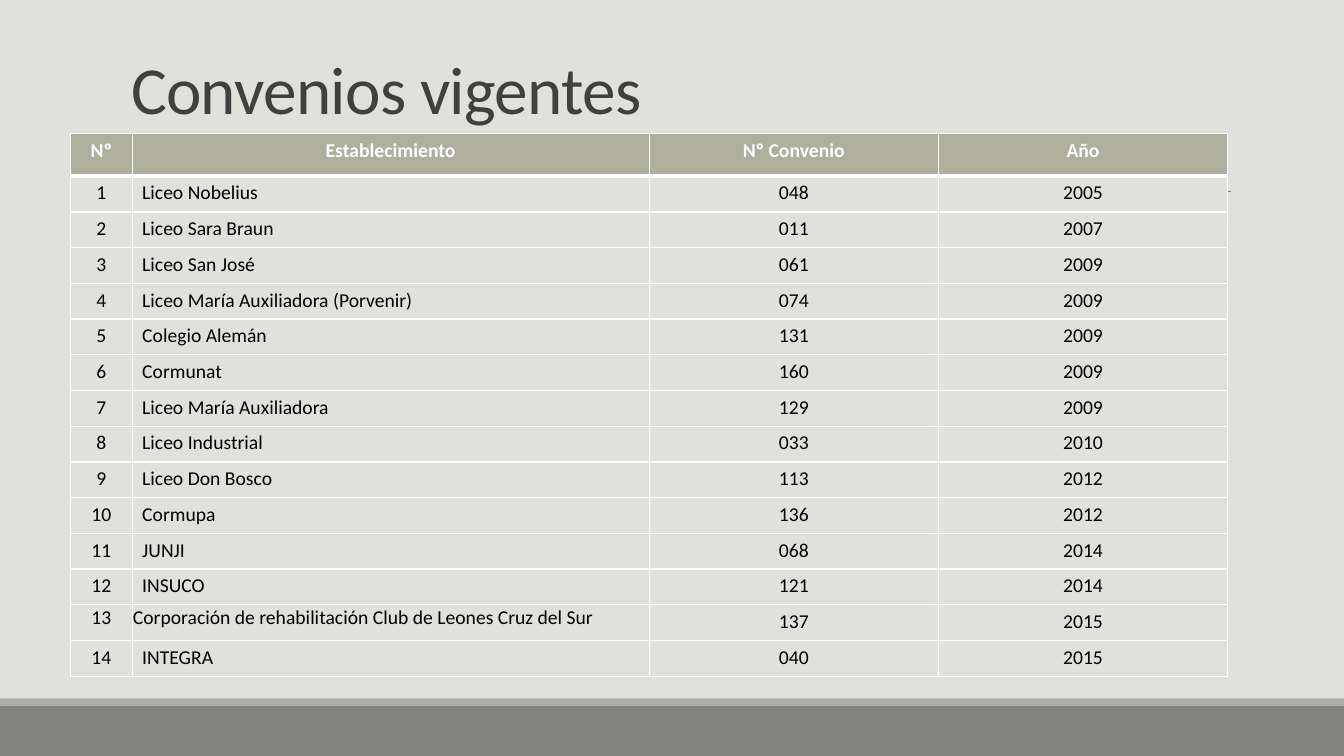
from dataclasses import dataclass

from lxml.etree import SubElement as Sub
from pptx import Presentation
from pptx.dml.color import RGBColor as Rgb
from pptx.enum.shapes import MSO_CONNECTOR as Link, MSO_SHAPE as Shape
from pptx.enum.text import MSO_ANCHOR as Anchor, MSO_AUTO_SIZE as Fit, PP_ALIGN as Align
from pptx.oxml.ns import qn
from pptx.util import Cm, Pt


@dataclass(frozen=True)
class Theme:
    font: str = "Calibri"
    back: str = "E1E1DB"
    foot: str = "82847C"
    strip: str = "ACADA8"
    rule: str = "808080"
    title: str = "404040"
    head: str = "AFAF9E"
    white: str = "FFFFFF"
    ink: str = "000000"
    big: int = 48
    small: int = 14


LOOK = Theme()
WIDE, HIGH = 33.87, 19.05

HEADS = ("Nº", "Establecimiento", "Nº Convenio", "Año")
DEALS = (
    ("Liceo Nobelius", "048", "2005"),
    ("Liceo Sara Braun", "011", "2007"),
    ("Liceo San José", "061", "2009"),
    ("Liceo María Auxiliadora (Porvenir)", "074", "2009"),
    ("Colegio Alemán", "131", "2009"),
    ("Cormunat", "160", "2009"),
    ("Liceo María Auxiliadora", "129", "2009"),
    ("Liceo Industrial", "033", "2010"),
    ("Liceo Don Bosco", "113", "2012"),
    ("Cormupa", "136", "2012"),
    ("JUNJI", "068", "2014"),
    ("INSUCO", "121", "2014"),
    ("Corporación de rehabilitación Club de Leones Cruz del Sur", "137", "2015"),
    ("INTEGRA", "040", "2015"),
)
TIGHT = 13  # row whose first two cells have almost no margin
COLS = (1.55, 13.03, 7.29, 7.29)
TOP, ROW = 1.07, 0.9


def color(code):
    return Rgb.from_string(code)


def write(para, text, size, tint, bold=False):
    run = para.add_run()
    run.text = text
    font = run.font
    font.name, font.size, font.bold = LOOK.font, Pt(size), bold
    font.color.rgb = color(tint)
    return run


def band(slide, x, y, w, h, tint):
    bar = slide.shapes.add_shape(Shape.RECTANGLE, Cm(x), Cm(y), Cm(w), Cm(h))
    bar.shadow.inherit = False
    bar.fill.solid()
    bar.fill.fore_color.rgb = color(tint)
    bar.line.fill.background()


# Background, footer bands and thin rule
def frame(slide, w, h):
    slide.background.fill.solid()
    slide.background.fill.fore_color.rgb = color(LOOK.back)
    foot, strip = 1.27, 0.18
    band(slide, 0, h - foot, w, foot, LOOK.foot)
    band(slide, 0, h - foot - strip, w, strip, LOOK.strip)
    rule = slide.shapes.add_connector(
        Link.STRAIGHT, Cm(3.33), Cm(4.83), Cm(31.01), Cm(4.83))
    rule.line.color.rgb = color(LOOK.rule)
    rule.line.width = Pt(0.5)
    Sub(rule._element.spPr, qn("a:effectLst"))


# Title placeholder
def title(slide, x, y, w, h):
    box = slide.shapes.title
    box.left, box.top, box.width, box.height = Cm(x), Cm(y), Cm(w), Cm(h)
    text = box.text_frame
    text.word_wrap, text.auto_size = True, Fit.NONE
    text.vertical_anchor = Anchor.BOTTOM
    para = text.paragraphs[0]
    para.alignment, para.line_spacing = Align.LEFT, 0.85
    run = write(para, "Convenios vigentes", LOOK.big, LOOK.title)
    run._r.get_or_add_rPr().set("spc", "-50")


def edge(cell, side, width):
    line = Sub(cell._tc.get_or_add_tcPr(), qn("a:ln" + side), w=str(Pt(width)))
    fill = Sub(line, qn("a:solidFill"))
    Sub(fill, qn("a:srgbClr"), val=LOOK.white)


def fill_cell(cell, text, row, col):
    head = row == 0
    # The line under the heading is thicker
    for side in "LRTB":
        thick = (row, side) in ((0, "B"), (1, "T"))
        edge(cell, side, 3 if thick else 1)
    cell.fill.solid()
    cell.fill.fore_color.rgb = color(LOOK.head if head else LOOK.back)
    cell.vertical_anchor = Anchor.TOP
    if row == TIGHT and col < 2:
        cell.margin_left = cell.margin_right = cell.margin_top = Cm(0.02)
        cell.margin_bottom = 0
    para = cell.text_frame.paragraphs[0]
    para.alignment = Align.LEFT if col == 1 and not head else Align.CENTER
    write(para, text, LOOK.small, LOOK.white if head else LOOK.ink, head)


# Table of agreements
def deals(slide, x, y):
    rows = [HEADS] + [(str(n), *deal) for n, deal in enumerate(DEALS, 1)]
    high = TOP + ROW * len(DEALS)
    grid = slide.shapes.add_table(
        len(rows), len(COLS), Cm(x), Cm(y), Cm(sum(COLS)), Cm(high)).table
    grid.horz_banding = False
    for col, width in zip(grid.columns, COLS):
        col.width = Cm(width)
    for r, texts in enumerate(rows):
        grid.rows[r].height = Cm(ROW if r else TOP)
        for c, text in enumerate(texts):
            fill_cell(grid.cell(r, c), text, r, c)


def main():
    deck = Presentation()
    deck.slide_width, deck.slide_height = Cm(WIDE), Cm(HIGH)
    slide = deck.slides.add_slide(deck.slide_layouts[5])
    frame(slide, WIDE, HIGH)
    title(slide, 3.05, 0.79, 27.94, 2.56)
    deals(slide, 1.78, 3.37)
    deck.save("out.pptx")


if __name__ == "__main__":
    main()
